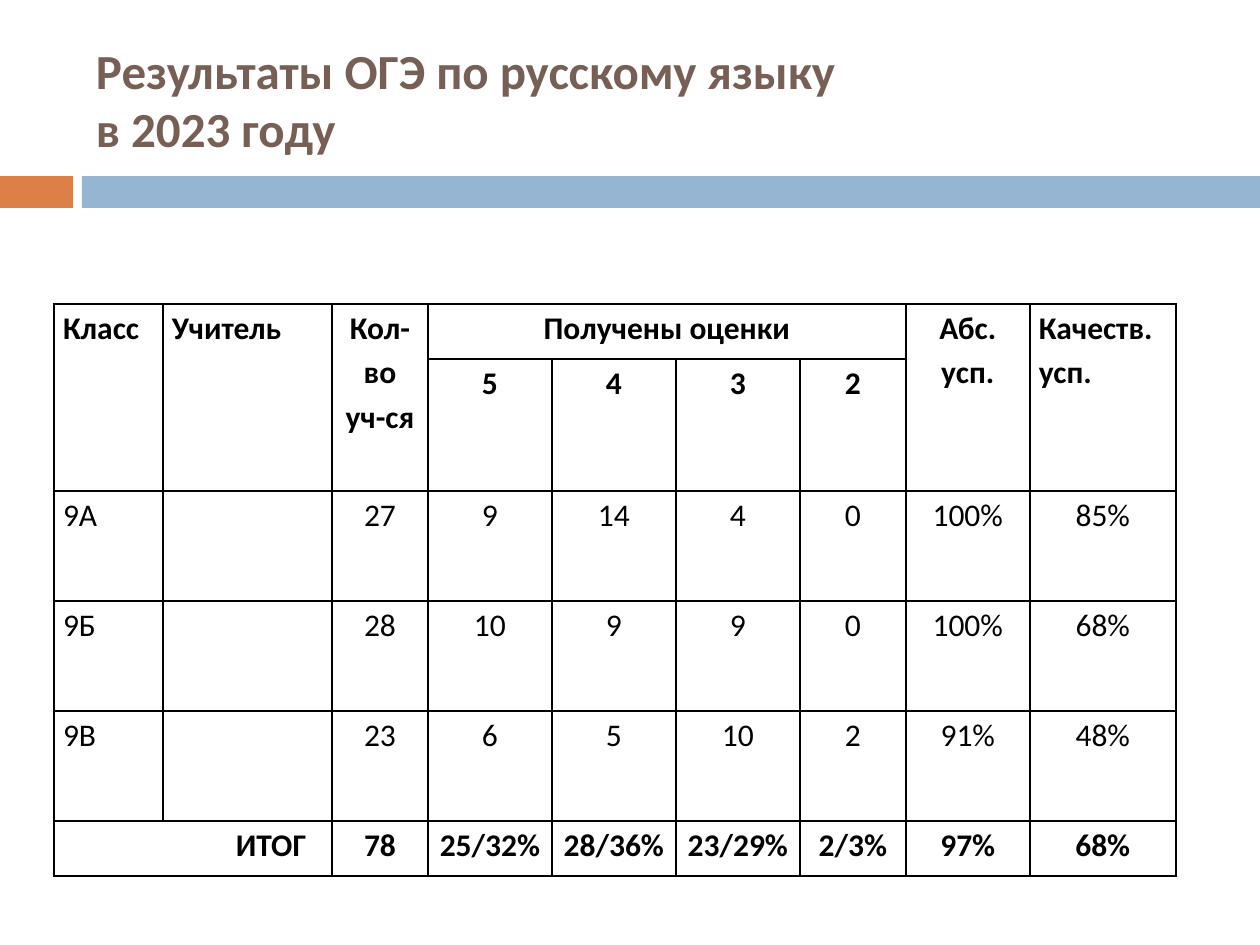
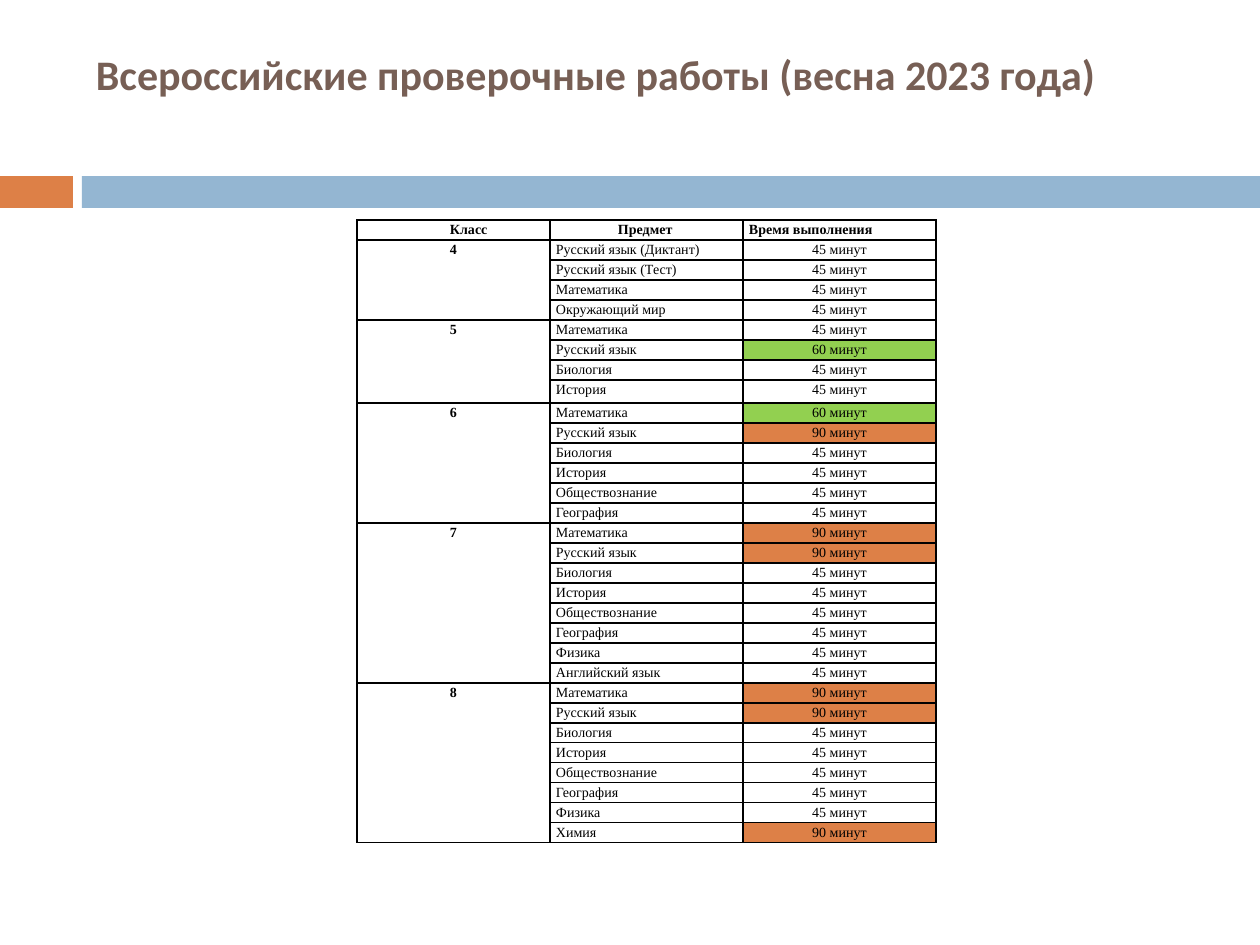
from dataclasses import dataclass

from lxml import etree
from pptx import Presentation
from pptx.dml.color import RGBColor
from pptx.enum.shapes import MSO_SHAPE
from pptx.enum.text import MSO_ANCHOR, PP_ALIGN
from pptx.oxml.ns import qn
from pptx.util import Emu, Pt

LEFT, CENTER = PP_ALIGN.LEFT, PP_ALIGN.CENTER
RECTANGLE, MIDDLE = MSO_SHAPE.RECTANGLE, MSO_ANCHOR.MIDDLE

# Shared look
EMU_PER_PX = 914400 / 126
PAGE_WIDTH, PAGE_HEIGHT = 1260, 945
ORANGE, BLUE, GREEN = "DD8047", "94B6D2", "92D050"
BROWN, BLACK = "775F55", "000000"
SANS, SERIF = "Calibri", "Times New Roman"
BORDER_WIDTH = Pt(1)


@dataclass
class Band:
    left: int
    width: int
    color: str


@dataclass
class Cell:
    text: str = ""
    align: PP_ALIGN = CENTER
    bold: bool = False
    indent: int = 0
    fill: str = ""
    rows: int = 1
    columns: int = 1


@dataclass
class Grid:
    left: int
    top: int
    columns: list[int]
    rows: list[int]
    font: str
    size: int
    inset: int
    cells: dict[tuple[int, int], Cell]


BANDS = [Band(0, 73, ORANGE), Band(82, PAGE_WIDTH - 82, BLUE)]


def px(length: int) -> Emu:
    return Emu(round(length * EMU_PER_PX))


def rgb(color: str) -> RGBColor:
    return RGBColor.from_string(color)


def write(frame, text: str, *, font: str, size: int, color: str = BLACK, bold: bool = False,
          align: PP_ALIGN = LEFT, spacing: float = 1.0, indent: int = 0) -> None:
    """Fill a text frame, one paragraph for each line of the text."""
    frame.word_wrap = True
    for index, line in enumerate(text.split("\n")):
        para = frame.add_paragraph() if index else frame.paragraphs[0]
        para.alignment = align
        para.line_spacing = spacing
        if indent:
            para._p.get_or_add_pPr().set("marL", str(px(indent)))
        if line:
            span = para.add_run()
            span.text = line
            span.font.name, span.font.size = font, Pt(size)
            span.font.bold = bold
            span.font.color.rgb = rgb(color)
        else:
            etree.SubElement(para._p, qn("a:endParaRPr"), sz=str(size * 100))


def add_page(deck, title: str, size: int, bottom_inset: int = 6):
    """Add a slide with the title and the two bands under it."""
    page = deck.slides.add_slide(deck.slide_layouts[6])
    for band in BANDS:
        shape = page.shapes.add_shape(RECTANGLE, px(band.left), px(176), px(band.width), px(32))
        shape.shadow.inherit = False
        shape.fill.solid()
        shape.fill.fore_color.rgb = rgb(band.color)
        shape.line.fill.background()
    box = page.shapes.add_textbox(px(84), px(31), px(1124), px(136))
    frame = box.text_frame
    frame.vertical_anchor = MIDDLE
    frame.margin_left = frame.margin_right = px(12)
    frame.margin_top, frame.margin_bottom = px(6), px(bottom_inset)
    write(frame, title, font=SANS, size=size, color=BROWN, bold=True)
    return page


def add_borders(cell) -> None:
    properties = cell._tc.get_or_add_tcPr()
    for side in ("lnL", "lnR", "lnT", "lnB"):
        line = etree.SubElement(properties, qn(f"a:{side}"), w=str(BORDER_WIDTH))
        solid = etree.SubElement(line, qn("a:solidFill"))
        etree.SubElement(solid, qn("a:srgbClr"), val=BLACK)


def add_grid(page, grid: Grid) -> None:
    table = page.shapes.add_table(
        len(grid.rows), len(grid.columns), px(grid.left), px(grid.top),
        px(sum(grid.columns)), px(sum(grid.rows))).table
    table.first_row = table.horz_banding = False
    for column, width in zip(table.columns, grid.columns):
        column.width = px(width)
    for row, height in zip(table.rows, grid.rows):
        row.height = px(height)

    for row in range(len(grid.rows)):
        for column in range(len(grid.columns)):
            cell = table.cell(row, column)
            content = grid.cells.get((row, column), Cell())
            add_borders(cell)
            if content.fill:
                cell.fill.solid()
                cell.fill.fore_color.rgb = rgb(content.fill)
            else:
                cell.fill.background()
            cell.margin_left = cell.margin_right = px(grid.inset)
            cell.margin_top = cell.margin_bottom = 0
            write(cell.text_frame, content.text, font=grid.font, size=grid.size,
                  bold=content.bold, align=content.align, spacing=1.15, indent=content.indent)

    for (row, column), content in grid.cells.items():
        if content.rows > 1 or content.columns > 1:
            last = table.cell(row + content.rows - 1, column + content.columns - 1)
            table.cell(row, column).merge(last)


# Slide 1: exam results by class
CLASS_RESULTS = [
    ("9А", "", "27", "9", "14", "4", "0", "100%", "85%"),
    ("9Б", "", "28", "10", "9", "9", "0", "100%", "68%"),
    ("9В", "", "23", "6", "5", "10", "2", "91%", "48%"),
]
TOTALS = ("78", "25/32%", "28/36%", "23/29%", "2/3%", "97%", "68%")


def results_grid() -> Grid:
    cells = {
        (0, 0): Cell("Класс", LEFT, bold=True, rows=2),
        (0, 1): Cell("Учитель", LEFT, bold=True, rows=2),
        (0, 2): Cell("Кол-во уч-ся", bold=True, rows=2),
        (0, 3): Cell("Получены оценки", bold=True, columns=4),
        (0, 7): Cell("Абс. усп.", bold=True, rows=2),
        (0, 8): Cell("Качеств. усп.", LEFT, bold=True, rows=2),
        (5, 0): Cell("ИТОГ", bold=True, indent=156, columns=2),
    }
    for column, mark in enumerate("5432", start=3):
        cells[1, column] = Cell(mark, bold=True)
    for row, values in enumerate(CLASS_RESULTS, start=2):
        for column, value in enumerate(values):
            cells[row, column] = Cell(value, CENTER if column else LEFT)
    for column, value in enumerate(TOTALS, start=2):
        cells[5, column] = Cell(value, bold=True)
    return Grid(54, 304, [109, 169, 96, 124, 124, 124, 106, 124, 146],
                [55, 132, 110, 110, 110, 55], SANS, 18, 9, cells)


# Slide 2: test subjects and minutes by school year
TESTS = {
    "4": [("Русский язык (Диктант)", 45), ("Русский язык (Тест)", 45),
          ("Математика", 45), ("Окружающий мир", 45)],
    "5": [("Математика", 45), ("Русский язык", 60), ("Биология", 45), ("История", 45)],
    "6": [("Математика", 60), ("Русский язык", 90), ("Биология", 45), ("История", 45),
          ("Обществознание", 45), ("География", 45)],
    "7": [("Математика", 90), ("Русский язык", 90), ("Биология", 45), ("История", 45),
          ("Обществознание", 45), ("География", 45), ("Физика", 45), ("Английский язык", 45)],
    "8": [("Математика", 90), ("Русский язык", 90), ("Биология", 45), ("История", 45),
          ("Обществознание", 45), ("География", 45), ("Физика", 45), ("Химия", 90)],
}
DURATION_FILLS = {45: "", 60: GREEN, 90: ORANGE}


def tests_grid() -> Grid:
    cells = {
        (0, 0): Cell("Класс", LEFT, bold=True, indent=87),
        (0, 1): Cell("Предмет", LEFT, bold=True, indent=62),
        (0, 2): Cell("Время выполнения", LEFT, bold=True),
    }
    heights = [20]
    for year, subjects in TESTS.items():
        cells[len(heights), 0] = Cell(year, bold=True, rows=len(subjects))
        for subject, minutes in subjects:
            row = len(heights)
            cells[row, 1] = Cell(subject, LEFT)
            cells[row, 2] = Cell(f"{minutes} минут", fill=DURATION_FILLS[minutes])
            heights.append(20)
    heights[8] = 23
    return Grid(357, 220, [193] * 3, heights, SERIF, 8, 6, cells)


def main() -> None:
    deck = Presentation()
    deck.slide_width, deck.slide_height = px(PAGE_WIDTH), px(PAGE_HEIGHT)
    results_page = add_page(deck, "Результаты ОГЭ по русскому языку\nв 2023 году", 28)
    add_grid(results_page, results_grid())
    tests_page = add_page(deck, "Всероссийские проверочные работы (весна 2023 года)", 24,
                          bottom_inset=57)
    add_grid(tests_page, tests_grid())
    deck.save("out.pptx")


if __name__ == "__main__":
    main()
